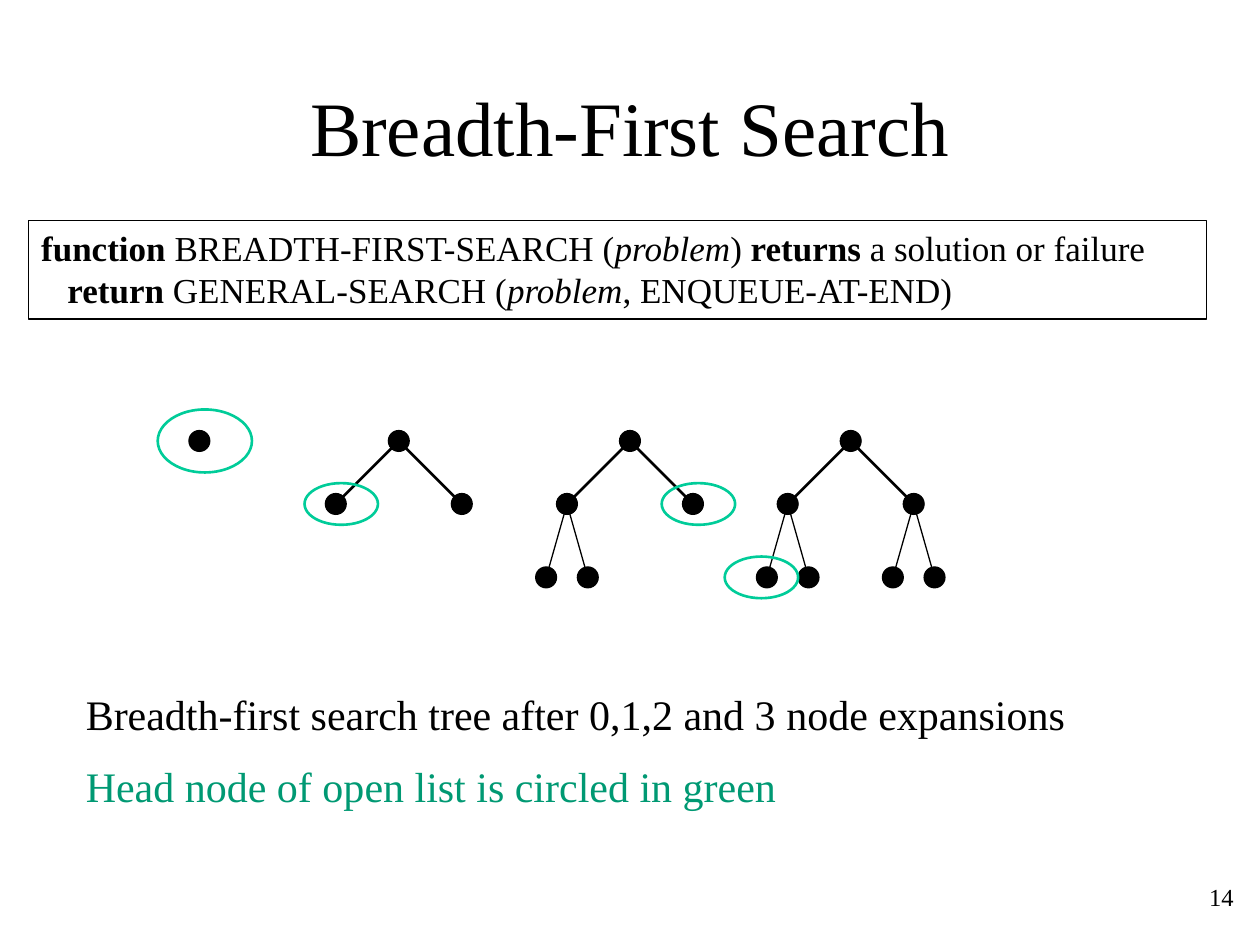
"""Build the breadth-first search slide."""
from pptx import Presentation
from pptx.dml.color import RGBColor
from pptx.enum.shapes import MSO_CONNECTOR, MSO_SHAPE
from pptx.enum.text import MSO_ANCHOR, PP_ALIGN
from pptx.oxml.ns import qn
from pptx.util import Cm, Pt
from lxml.etree import SubElement

INK = {"black": "000000", "ring": "00CC99", "green": "009973"}


def write(para, text, size=24, color="black", bold=False, italic=False):
    """Add a run of text to a paragraph."""
    run = para.add_run()
    run.text = text
    font = run.font
    font.name, font.size = "Times New Roman", Pt(size)
    font.bold, font.italic = bold, italic
    font.color.rgb = RGBColor.from_string(INK[color])


class Board:
    """Hold the style and the current slide."""

    def __init__(self, slide, dot=0.42, thin=0.75, thick=1.5):
        """Keep the slide, the dot size and the line widths."""
        self.slide, self.shapes = slide, slide.shapes
        self.dot, self.thin, self.thick = dot, thin, thick

    def stroke(self, line, color, width):
        """Set the colour and width of a line."""
        line.color.rgb = RGBColor.from_string(INK[color])
        line.width = Pt(width)

    def title(self, text, *box):
        """Place and fill the title."""
        head = self.shapes.title
        head.left, head.top, head.width, head.height = map(Cm, box)
        frame = head.text_frame
        frame.vertical_anchor = MSO_ANCHOR.MIDDLE
        para = frame.paragraphs[0]
        para.alignment = PP_ALIGN.CENTER
        write(para, text, size=44)

    def text(self, rows, *box, align=PP_ALIGN.LEFT, gap=0, indent=0, border=False):
        """Add a text box with one paragraph for each row of runs."""
        shape = self.shapes.add_textbox(*map(Cm, box))
        frame = shape.text_frame
        frame.word_wrap = True
        for num, row in enumerate(rows):
            para = frame.add_paragraph() if num else frame.paragraphs[0]
            para.alignment = align
            if num:
                para.space_before = Pt(gap)
                para._p.get_or_add_pPr().set("marL", str(Cm(indent)))
            for words, style in row:
                write(para, words, **style)
        if border:
            self.stroke(shape.line, "black", self.thin)

    def oval(self, x, y, wide, high, color, width, solid=False):
        """Add an ellipse around a centre."""
        box = x - wide / 2, y - high / 2, wide, high
        shape = self.shapes.add_shape(MSO_SHAPE.OVAL, *map(Cm, box))
        shape.shadow.inherit = False
        if solid:
            shape.fill.solid()
            shape.fill.fore_color.rgb = RGBColor.from_string(INK[color])
        else:
            shape.fill.background()
        self.stroke(shape.line, color, width)

    def node(self, x, y):
        """Add a tree node."""
        self.oval(x, y, self.dot, self.dot, "black", self.thin, solid=True)

    def ring(self, x, y, wide=1.48, high=0.84):
        """Circle the head of the open list."""
        self.oval(x, y, wide, high, "ring", self.thick)

    def edge(self, start, end, width):
        """Add a line from parent to child."""
        line = self.shapes.add_connector(MSO_CONNECTOR.STRAIGHT, *map(Cm, start + end))
        self.stroke(line.line, "black", width)
        SubElement(line._element.spPr, qn("a:effectLst"))

    def split(self, x, y, half, drop, width):
        """Expand a node into two children and return their places."""
        kids = [(x - half, y + drop), (x + half, y + drop)]
        for kid in kids:
            self.edge((x, y), kid, width)
            self.node(*kid)
        return kids

    def tree(self, x, y, count):
        """Draw a search tree after a count of expansions."""
        self.node(x, y)
        if count:
            kids = self.split(x, y, 1.27, 1.27, self.thick)
            for kid in kids[:count - 1]:
                self.split(*kid, 0.42, 1.48, self.thin)


def main():
    """Build and save the slide."""
    deck = Presentation()
    deck.slide_width, deck.slide_height = Cm(25.4), Cm(19.05)
    board = Board(deck.slides.add_slide(deck.slide_layouts[5]))
    board.title("Breadth-First Search", 1.9, 1.27, 21.6, 2.54)

    plain = {"size": 20}
    bold, ital = {**plain, "bold": True}, {**plain, "italic": True}
    board.text([
        [("function", bold), (" BREADTH-FIRST-SEARCH (", plain), ("problem", ital),
         (") ", plain), ("returns", bold), (" a solution or failure", plain)],
        [("return", bold), (" GENERAL-SEARCH (", plain), ("problem", ital),
         (", ENQUEUE-AT-END)", plain)],
    ], 0.58, 4.45, 23.75, 1.98, indent=0.53, border=True)

    for count, x in enumerate((4.02, 8.04, 12.7, 17.15)):
        board.tree(x, 8.89, count)
    board.ring(4.13, 8.89, 1.9, 1.27)
    for x, y in ((6.88, 10.16), (14.08, 10.16), (15.35, 11.64)):
        board.ring(x, y)

    board.text([
        [("Breadth-first search tree after 0,1,2 and 3 node expansions", {})],
        [("Head node of open list is circled in green", {"color": "green"})],
    ], 1.48, 13.76, 23.06, 2.82, gap=12)
    board.text([[("14", {"size": 14})]], 19.84, 17.65, 5.28, 1.27, align=PP_ALIGN.RIGHT)
    deck.save("out.pptx")


if __name__ == "__main__":
    main()
